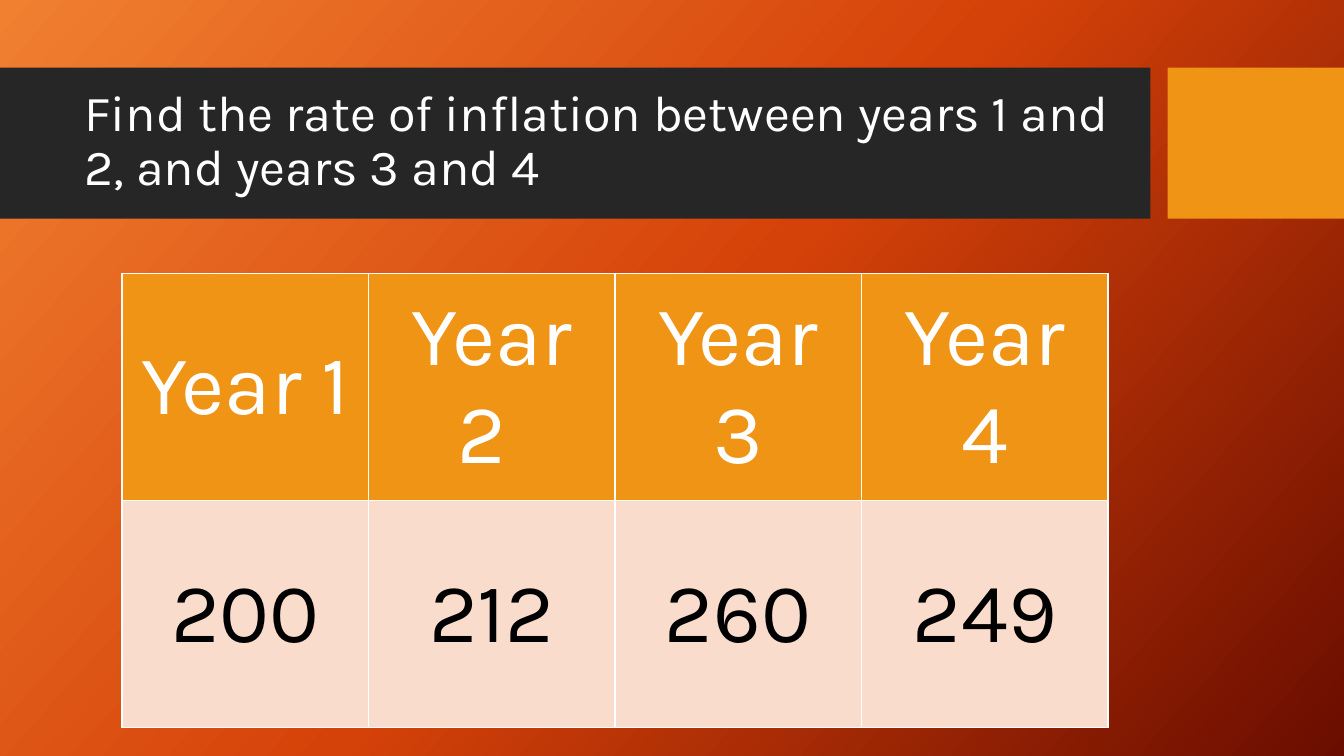
from copy import deepcopy
from dataclasses import dataclass

from lxml import etree
from pptx import Presentation
from pptx.dml.color import RGBColor
from pptx.enum.shapes import MSO_SHAPE
from pptx.enum.text import MSO_ANCHOR, PP_ALIGN
from pptx.oxml.ns import qn
from pptx.util import Pt

PX = 9144  # EMU per px, 100 px to the inch
RECTANGLE = MSO_SHAPE.RECTANGLE
MIDDLE = MSO_ANCHOR.MIDDLE
CENTER = PP_ALIGN.CENTER
SLIDE_SIZE = (1333, 750)

QUESTION = "Find the rate of inflation between years 1 and 2, and years 3 and 4"
PRICE_INDEX = [
    ["Year 1", "Year 2 ", "Year 3", "Year 4"],
    ["200", "212", "260", "249"],
]


@dataclass(frozen=True)
class Theme:
    font: str = "Karla"
    title_size: int = 36
    table_size: int = 60
    band: str = "262626"
    accent: str = "F09415"
    value_fill: str = "F9DCCC"
    light: str = "FFFFFF"
    dark: str = "000000"
    gradient: tuple = ((0, "F18031"), (0.5, "D54209"), (1, "6A0D00"))
    gradient_angle: int = 318  # counter-clockwise


THEME = Theme()


def rgb(value):
    return RGBColor.from_string(value)


def emu(*lengths):
    return [length * PX for length in lengths]


def paint_background(slide):
    fill = slide.background.fill
    fill.gradient()
    fill.gradient_angle = THEME.gradient_angle
    stop_list = slide.element.find(".//" + qn("a:gsLst"))
    stop_list.append(deepcopy(stop_list[-1]))
    for stop, (position, color) in zip(fill.gradient_stops, THEME.gradient):
        stop.position = position
        stop.color.rgb = rgb(color)


def add_text(paragraph, text, size, color):
    run = paragraph.add_run()
    run.text = text
    run.font.name = THEME.font
    run.font.size = Pt(size)
    run.font.color.rgb = rgb(color)


def add_block(slide, box, color):
    block = slide.shapes.add_shape(RECTANGLE, *emu(*box))
    block.shadow.inherit = False
    block.fill.solid()
    block.fill.fore_color.rgb = rgb(color)
    block.line.fill.background()


def add_header(slide, left, top, width, height):
    """Dark title band with an accent block at its right end."""
    accent_width, gap = 175, 17
    band_width = width - accent_width - gap
    add_block(slide, (left, top, band_width, height), THEME.band)
    add_block(slide, (left + width - accent_width, top, accent_width, height), THEME.accent)

    title_box = (left + 74, top + 15, band_width - 90, height - 32)
    title = slide.shapes.add_textbox(*emu(*title_box)).text_frame
    title.word_wrap = True
    title.vertical_anchor = MIDDLE
    paragraph = title.paragraphs[0]
    paragraph.line_spacing = 0.9
    add_text(paragraph, QUESTION, THEME.title_size, THEME.light)


def outline_cell(cell):
    """Add borders ahead of the fill, as the schema orders them."""
    properties = cell._tc.get_or_add_tcPr()
    for index, side in enumerate(("a:lnL", "a:lnR", "a:lnT", "a:lnB")):
        border = etree.Element(qn(side), w=str(Pt(1)))
        solid = etree.SubElement(border, qn("a:solidFill"))
        etree.SubElement(solid, qn("a:srgbClr"), val=THEME.light)
        properties.insert(index, border)


def add_index_table(slide, left, top, width, height):
    row_count, column_count = len(PRICE_INDEX), len(PRICE_INDEX[0])
    table = slide.shapes.add_table(
        row_count, column_count, *emu(left, top, width, height)
    ).table
    row_styles = ((THEME.accent, THEME.light), (THEME.value_fill, THEME.dark))
    for row, texts, (fill, ink) in zip(table.rows, PRICE_INDEX, row_styles):
        for cell, text in zip(row.cells, texts):
            cell.fill.solid()
            cell.fill.fore_color.rgb = rgb(fill)
            cell.vertical_anchor = MIDDLE
            outline_cell(cell)
            paragraph = cell.text_frame.paragraphs[0]
            paragraph.alignment = CENTER
            add_text(paragraph, text, THEME.table_size, ink)


def main():
    presentation = Presentation()
    presentation.slide_width, presentation.slide_height = emu(*SLIDE_SIZE)
    slide = presentation.slides.add_slide(presentation.slide_layouts[6])
    paint_background(slide)
    add_header(slide, 0, 67, SLIDE_SIZE[0], 150)
    add_index_table(slide, 121, 271, 978, 451)
    presentation.save("out.pptx")


if __name__ == "__main__":
    main()
